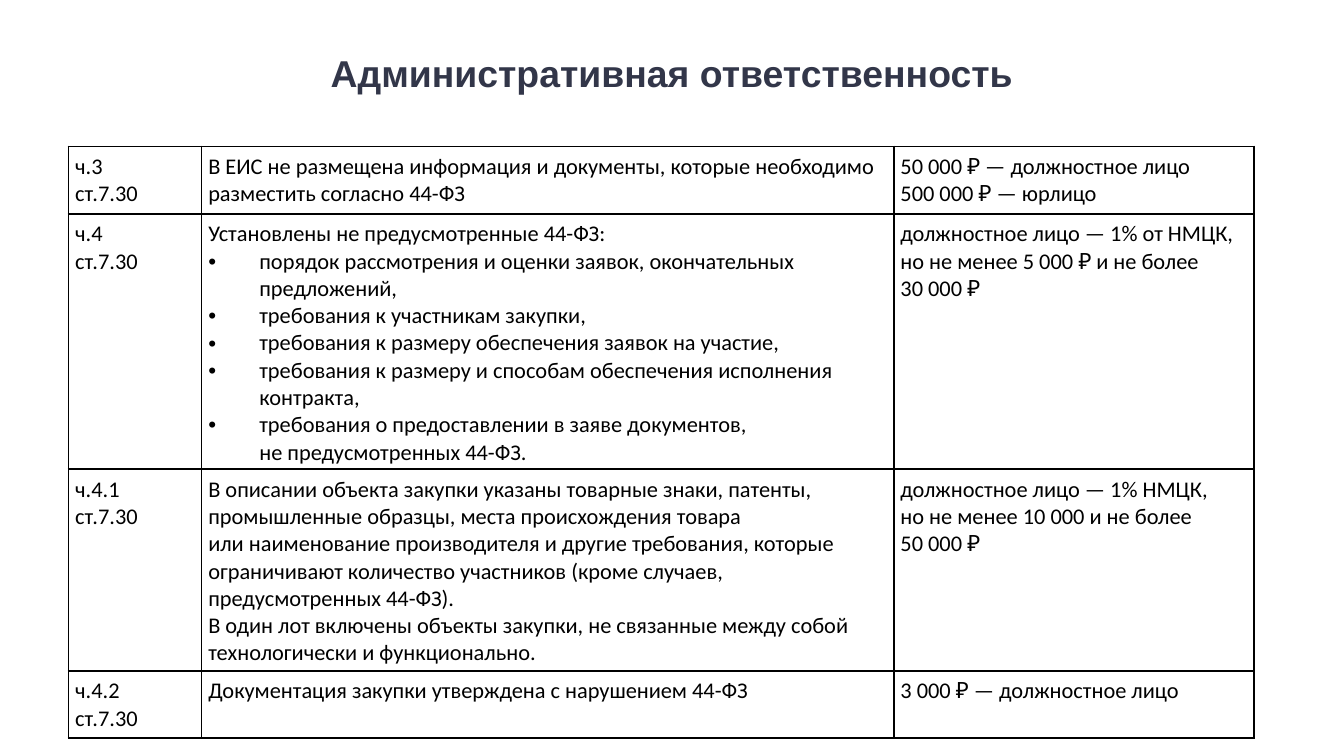
"""Build a slide with a table of administrative fines, where ~ is a hard space."""
import pptx
import pptx.util
import pptx.dml.color
import pptx.enum.text
import pptx.oxml.ns
from lxml import etree

Inches = pptx.util.Inches

TITLE = "Административная ответственность"
COLS = [0.99, 5.15, 2.68]
HIGHS = [0.48, 1.5, 1.37, 0.36]
ROWS = [
    ("ч.3\nст.7.30",
     "В~ЕИС не~размещена информация и~документы, которые необходимо разместить согласно 44-ФЗ",
     "50~000~₽ — должностное лицо\n500~000~₽ — юрлицо"),
    ("ч.4\nст.7.30",
     ["Установлены не~предусмотренные 44-ФЗ:",
      "порядок рассмотрения и~оценки заявок, окончательных предложений,",
      "требования к~участникам закупки,",
      "требования к~размеру обеспечения заявок на~участие,",
      "требования к~размеру и~способам обеспечения исполнения контракта,",
      "требования о~предоставлении в~заяве документов, не~предусмотренных 44-ФЗ."],
     "должностное лицо~— 1% от~НМЦК, но~не~менее 5~000~₽ и~не~более 30~000~₽"),
    ("ч.4.1\nст.7.30",
     "В~описании объекта закупки указаны товарные знаки, патенты, промышленные образцы, "
     "места происхождения товара или~наименование производителя и~другие требования, "
     "которые ограничивают количество участников (кроме случаев, предусмотренных 44-ФЗ).\n"
     "В~один лот включены объекты закупки, не~связанные между собой "
     "технологически и~функционально.",
     "должностное лицо~— 1% НМЦК, но~не~менее 10~000 и~не~более 50~000~₽"),
    ("ч.4.2\nст.7.30",
     "Документация закупки утверждена с~нарушением 44-ФЗ",
     "3~000~₽ — должностное лицо"),
]


def color(code):
    return pptx.dml.color.RGBColor.from_string(code)


def add(node, tag, **attrs):
    return etree.SubElement(node, pptx.oxml.ns.qn(tag), attrs)


def style(para, face, size, code, bold=False):
    font = para.font
    font.name, font.size, font.bold = face, pptx.util.Pt(size), bold
    font.color.rgb = color(code)


def bullet(para):
    props = para._p.get_or_add_pPr()
    props.set("marL", str(Inches(0.38)))
    props.set("indent", str(-Inches(0.38)))
    add(props, "a:buFont", typeface="Arial")
    add(props, "a:buChar", char="•")
    add(add(props, "a:tabLst"), "a:tab", pos=str(Inches(0.5)), algn="l")


def border(cell):
    props = cell._tc.get_or_add_tcPr()
    for side in "LRTB":
        line = add(props, "a:ln" + side, w=str(pptx.util.Pt(1)))
        add(add(line, "a:solidFill"), "a:srgbClr", val="000000")


def fill(cell, body):
    cell.margin_left = cell.margin_right = Inches(0.05)
    cell.margin_top = cell.margin_bottom = Inches(0.05)
    border(cell)
    cell.fill.background()
    lines = [body] if isinstance(body, str) else body
    for i, text in enumerate(lines):
        frame = cell.text_frame
        para = frame.add_paragraph() if i else frame.paragraphs[0]
        para.text = text.replace("~", chr(160))
        if i:
            bullet(para)
        style(para, "Calibri", 12, "000000")


def main():
    deck = pptx.Presentation()
    deck.slide_width, deck.slide_height = Inches(10), Inches(10) * 9 // 16
    slide = deck.slides.add_slide(deck.slide_layouts[6])

    box = slide.shapes.add_textbox(Inches(0.5), Inches(0.23), Inches(9), Inches(0.62))
    frame = box.text_frame
    frame.word_wrap = True
    frame.vertical_anchor = pptx.enum.text.MSO_ANCHOR.MIDDLE
    head = frame.paragraphs[0]
    head.text = TITLE
    head.alignment = pptx.enum.text.PP_ALIGN.CENTER
    style(head, "Arial", 20, "323649", True)

    grid = slide.shapes.add_table(
        len(ROWS), len(COLS), Inches(0.51), Inches(1.09),
        Inches(sum(COLS)), Inches(4.4))
    table = grid.table
    table.first_row = table.horz_banding = False
    for col, wide in zip(table.columns, COLS):
        col.width = Inches(wide)
    for row, high, cells in zip(table.rows, HIGHS, ROWS):
        row.height = Inches(high)
        for cell, body in zip(row.cells, cells):
            fill(cell, body)
    grid.height = Inches(4.4)

    deck.save("out.pptx")


if __name__ == "__main__":
    main()
